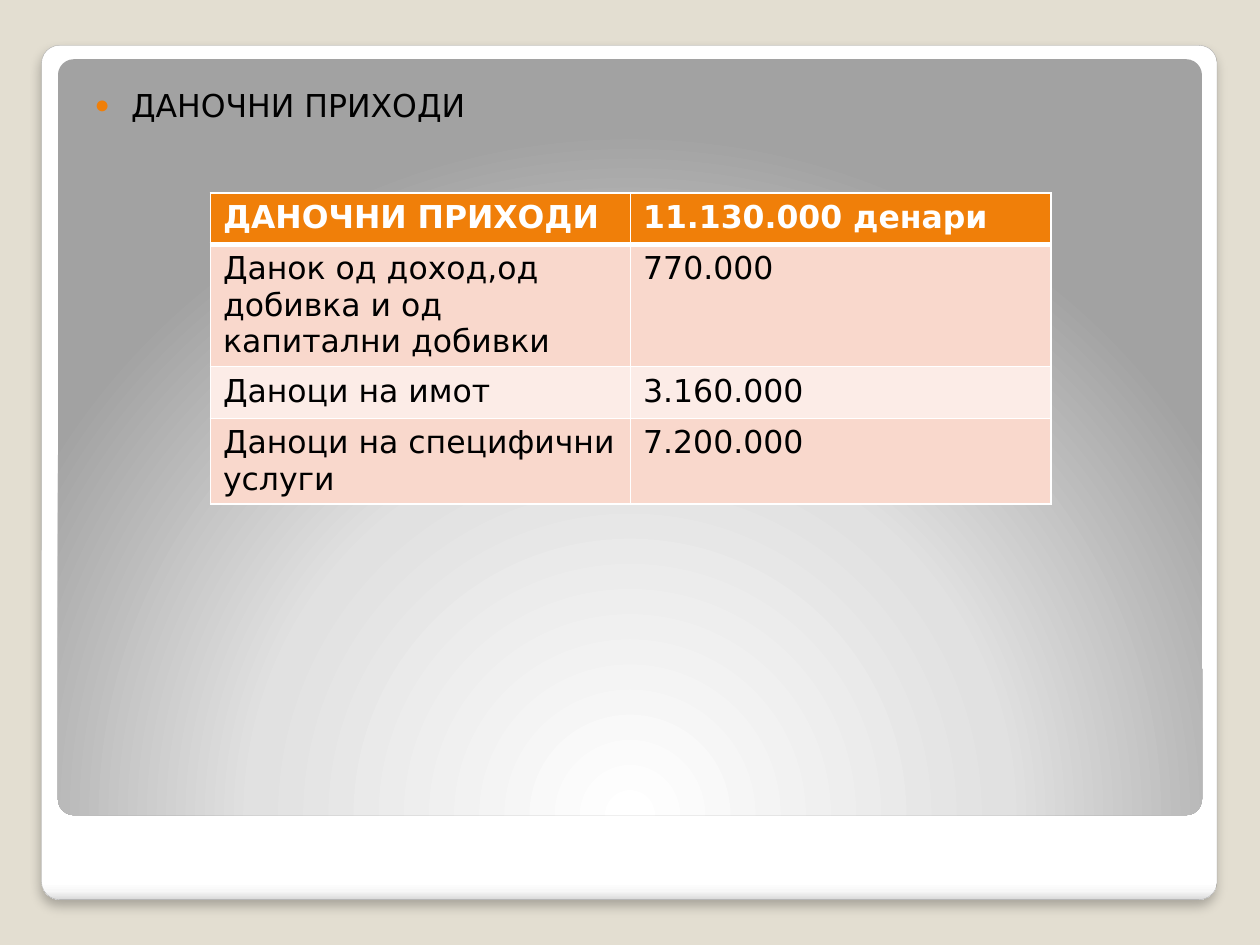
from lxml import etree
from pptx import Presentation
from pptx.dml.color import RGBColor
from pptx.enum.shapes import MSO_SHAPE
from pptx.oxml import parse_xml
from pptx.oxml.ns import nsdecls, qn
from pptx.util import Inches, Pt

ROUND = MSO_SHAPE.ROUNDED_RECTANGLE
FONT = "DejaVu Sans"
ORANGE, WHITE, BLACK = "F07F09", "FFFFFF", "000000"
BANDS = ["F9D8CC", "FCECE7"]
ROWS = [
    ("ДАНОЧНИ ПРИХОДИ", "11.130.000 денари"),
    ("Данок од доход,од добивка и од капитални добивки", "770.000"),
    ("Даноци на имот", "3.160.000"),
    ("Даноци на специфични услуги", "7.200.000"),
]


def color(code):
    """Turn a hex string into a colour."""
    return RGBColor.from_string(code)


def write(frame, text, size=18, ink=BLACK, bold=False):
    """Put formatted text in a frame and return its paragraph."""
    para = frame.paragraphs[0]
    run = para.add_run()
    run.text = text
    font = run.font
    font.name, font.size, font.bold = FONT, Pt(size), bold
    font.color.rgb = color(ink)
    return para


def card(slide, box, stops, path):
    """Add a rounded panel with a gradient and no line or shadow."""
    shape = slide.shapes.add_shape(ROUND, *map(Inches, box))
    shape.adjustments[0] = 0.021
    shape.shadow.inherit = False
    shape.line.fill.background()
    shape.fill.background()
    marks = "".join(
        f'<a:gs pos="{pos * 1000}"><a:srgbClr val="{code}"/></a:gs>'
        for pos, code in stops)
    grad = parse_xml(f'<a:gradFill {nsdecls("a")} rotWithShape="1">'
                     f'<a:gsLst>{marks}</a:gsLst>{path}</a:gradFill>')
    props = shape.element.spPr
    props.replace(props.find(qn("a:noFill")), grad)
    return shape


def frame(slide, box):
    """Add the white outer panel with its soft shadow."""
    stops = [(0, WHITE), (98, WHITE), (99, "F7F7F7"), (100, "DADADA")]
    shape = card(slide, box, stops, '<a:lin ang="5400000" scaled="0"/>')
    shape.line.color.rgb = color("A4A4A4")
    shape.line.width = Pt(0.16)
    shade = parse_xml(
        f'<a:outerShdw {nsdecls("a")} blurRad="{Pt(6)}" dist="{Pt(4)}" '
        f'dir="5400000" algn="tl" rotWithShape="0"><a:srgbClr val="{BLACK}">'
        '<a:alpha val="25000"/></a:srgbClr></a:outerShdw>')
    shape.element.spPr.find(qn("a:effectLst")).append(shade)


def panel(slide, box):
    """Add the grey inner panel, lit from below."""
    stops = [(0, WHITE), (55, "E1E1E1"), (100, "A2A2A2")]
    card(slide, box, stops,
         '<a:path path="circle"><a:fillToRect l="50000" t="175000" '
         'r="50000" b="-75000"/></a:path>')


def topic(slide, box, text):
    """Fill the body placeholder with one bullet, above the panels."""
    body = slide.placeholders[1]
    body.left, body.top, body.width, body.height = map(Inches, box)
    slide.shapes.element.append(body.element)
    area = body.text_frame
    area.margin_left, area.margin_right = Inches(0.2), Inches(0.1)
    area.margin_top, area.margin_bottom = Inches(0.1), Inches(0.05)
    para = write(area, text)
    para.space_before = Pt(2.5)
    props = para._p.get_or_add_pPr()
    props.set("marL", str(Inches(0.29)))
    props.set("indent", str(-Inches(0.29)))
    tint = etree.SubElement(props, qn("a:buClr"))
    etree.SubElement(tint, qn("a:srgbClr"), val=ORANGE)
    etree.SubElement(props, qn("a:buSzPct"), val="80000")
    etree.SubElement(props, qn("a:buChar"), char="●")


def border(cell, sides):
    """Draw white cell borders, given the width of each side in order."""
    props = cell._tc.get_or_add_tcPr()
    for spot, (side, width) in enumerate(sides.items()):
        props.insert(spot, parse_xml(
            f'<a:ln{side} {nsdecls("a")} w="{Pt(width)}"><a:solidFill>'
            f'<a:srgbClr val="{WHITE}"/></a:solidFill></a:ln{side}>'))


def grid(slide, box, rows):
    """Add the table of tax income with a header and banded rows."""
    table = slide.shapes.add_table(
        len(rows), len(rows[0]), *map(Inches, box)).table
    for i, row in enumerate(rows):
        table.rows[i].height = Inches(0.41)
        head = i == 0
        for j, text in enumerate(row):
            cell = table.cell(i, j)
            cell.fill.solid()
            cell.fill.fore_color.rgb = color(
                ORANGE if head else BANDS[(i - 1) % 2])
            write(cell.text_frame, text, ink=WHITE if head else BLACK,
                  bold=head)
            border(cell, {"L": 1, "R": 1, "T": 3 if i == 1 else 1,
                          "B": 3 if head else 1})


def main():
    """Build the slide and save it."""
    deck = Presentation()
    deck.slide_width, deck.slide_height = Inches(10), Inches(7.5)
    slide = deck.slides.add_slide(deck.slide_layouts[1])
    title = slide.shapes.title.element
    title.getparent().remove(title)
    back = slide.background.fill
    back.solid()
    back.fore_color.rgb = color("E3DED1")
    frame(slide, (0.33, 0.36, 9.33, 6.78))
    panel(slide, (0.46, 0.47, 9.08, 6))
    topic(slide, (0.55, 0.58, 8.95, 4.58), ROWS[0][0])
    grid(slide, (1.67, 1.53, 6.67, 1.64), ROWS)
    deck.save("out.pptx")


if __name__ == "__main__":
    main()
